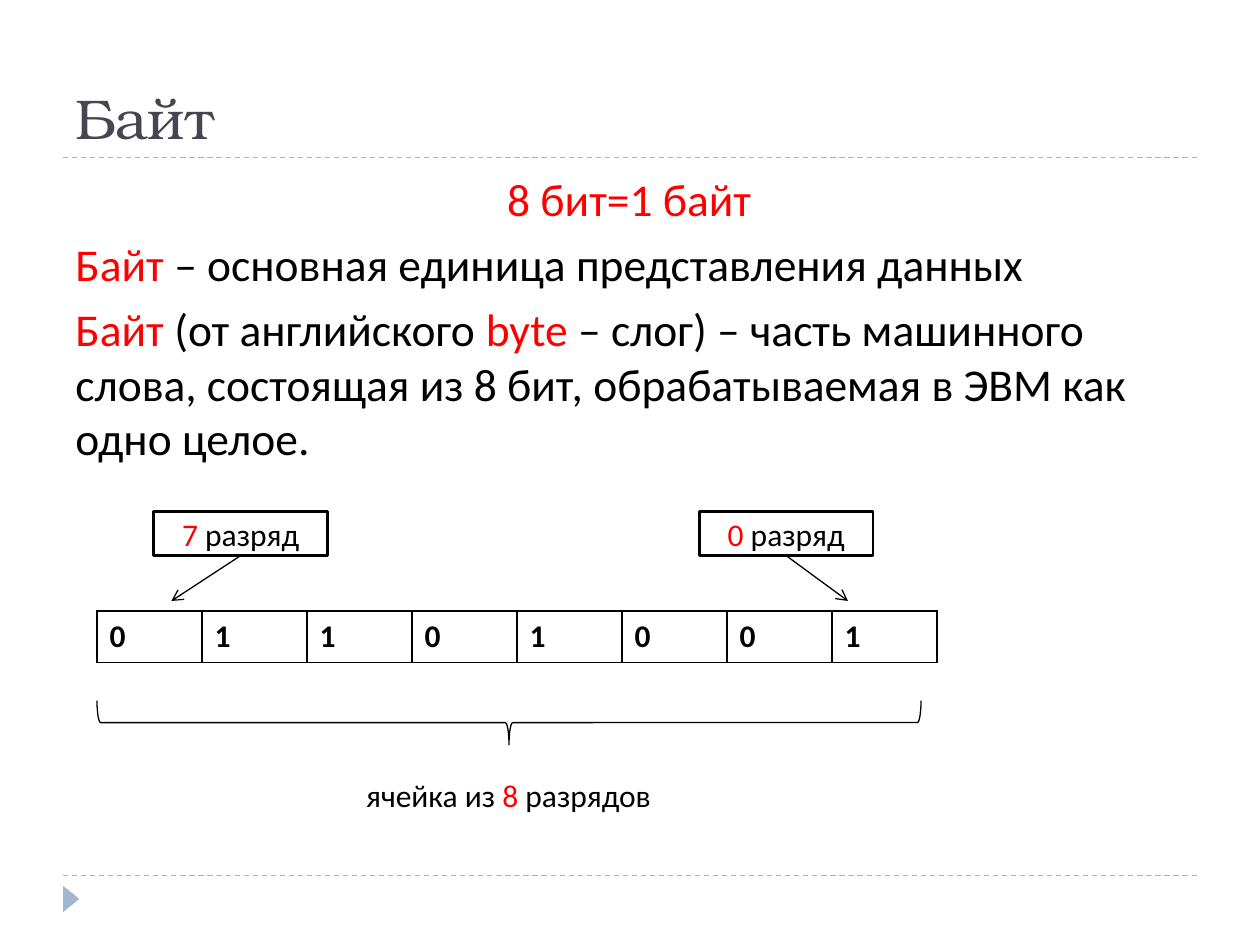
import pptx
import pptx.util
import pptx.dml.color
import pptx.enum.dml
import pptx.enum.shapes
import pptx.enum.text
import pptx.oxml
import pptx.oxml.ns
from lxml import etree

Inches = pptx.util.Inches
Pt = pptx.util.Pt
SHAPE = pptx.enum.shapes.MSO_SHAPE
ALIGN = pptx.enum.text.PP_ALIGN
ANCHOR = pptx.enum.text.MSO_ANCHOR
qn = pptx.oxml.ns.qn

COLORS = {
    "text": "000000",
    "accent": "FF0000",
    "title": "464653",
    "rule": "9FB8CD",
    "paper": "FFFFFF",
}
BITS = "01101001"


def color(name):
    return pptx.dml.color.RGBColor.from_string(COLORS[name])


def fill_solid(target, name):
    target.fill.solid()
    target.fill.fore_color.rgb = color(name)


def write_runs(paragraph, runs, size, align=ALIGN.LEFT):
    """Write (text, colour name) pairs into one paragraph."""
    paragraph.alignment = align
    paragraph.font.size = Pt(size)
    paragraph.font.name = "Calibri"
    for text, name in runs:
        run = paragraph.add_run()
        run.text = text
        run.font.color.rgb = color(name)


def add_text_box(slide, box, paragraphs, size, space_before=0):
    frame = slide.shapes.add_textbox(*map(Inches, box)).text_frame
    frame.word_wrap = True
    for index, (runs, align) in enumerate(paragraphs):
        paragraph = frame.add_paragraph() if index else frame.paragraphs[0]
        paragraph.space_before = Pt(space_before)
        write_runs(paragraph, runs, size, align)


def add_line(slide, start, end, name):
    line = slide.shapes.add_connector(
        pptx.enum.shapes.MSO_CONNECTOR.STRAIGHT, *map(Inches, start + end))
    line.line.color.rgb = color(name)
    line.line.width = Pt(0.75)
    etree.SubElement(line._element.spPr, qn("a:effectLst"))
    return line


def add_frame(slide, left, width):
    """Dashed rules and the corner marker."""
    for y in (6.95, 1.25):
        rule = add_line(slide, (left, y), (left + width, y), "rule")
        rule.line.dash_style = pptx.enum.dml.MSO_LINE.DASH
    marker = slide.shapes.add_shape(
        SHAPE.ISOSCELES_TRIANGLE, *map(Inches, (0.46, 7.07, 0.21, 0.13)))
    marker.rotation = 90
    marker.shadow.inherit = False
    fill_solid(marker, "rule")
    marker.line.fill.background()


def add_title(slide, box, text):
    title = slide.shapes.title
    title.left, title.top, title.width, title.height = map(Inches, box)
    title.text_frame.text = text
    title.text_frame.vertical_anchor = ANCHOR.BOTTOM
    paragraph = title.text_frame.paragraphs[0]
    paragraph.alignment = ALIGN.LEFT
    paragraph.font.name = "TeX Gyre Bonum"
    paragraph.font.size = Pt(32)
    paragraph.font.color.rgb = color("title")


def add_definition(slide, box):
    paragraphs = [
        ([("8 бит=1 байт", "accent")], ALIGN.CENTER),
        ([("Байт", "accent"),
          (" – основная единица представления данных", "text")], ALIGN.LEFT),
        ([("Байт", "accent"), (" (от английского ", "text"), ("byte ", "accent"),
          ("– слог) – часть машинного слова, состоящая из 8 бит, "
           "обрабатываемая в ЭВМ как одно целое.", "text")], ALIGN.LEFT),
    ]
    add_text_box(slide, box, paragraphs, 26, space_before=6)


def set_borders(cell):
    properties = cell._tc.get_or_add_tcPr()
    for index, side in enumerate(("lnL", "lnR", "lnT", "lnB")):
        border = etree.Element(qn(f"a:{side}"), w=str(Pt(1)))
        solid = etree.SubElement(border, qn("a:solidFill"))
        etree.SubElement(solid, qn("a:srgbClr"), val=COLORS["text"])
        properties.insert(index, border)


def add_bit_table(slide, box):
    table = slide.shapes.add_table(1, len(BITS), *map(Inches, box)).table
    for column, bit in enumerate(BITS):
        table.columns[column].width = Inches(box[2] / len(BITS))
        cell = table.cell(0, column)
        fill_solid(cell, "paper")
        set_borders(cell)
        paragraph = cell.text_frame.paragraphs[0]
        write_runs(paragraph, [(bit, "text")], 18)
        paragraph.font.bold = True


def add_bit_label(slide, box, digit, target):
    """Boxed bit number with an arrow to its cell."""
    label = slide.shapes.add_shape(SHAPE.RECTANGLE, *map(Inches, box))
    label.shadow.inherit = False
    fill_solid(label, "paper")
    label.line.color.rgb = color("text")
    label.line.width = Pt(1.5)
    label.text_frame.word_wrap = True
    label.text_frame.vertical_anchor = ANCHOR.MIDDLE
    write_runs(label.text_frame.paragraphs[0],
               [(digit, "accent"), (" разряд", "text")], 18, ALIGN.CENTER)

    left, top, width, height = box
    arrow = add_line(slide, (left + width / 2, top + height), target, "text")
    arrow.begin_connect(label, 2)
    etree.SubElement(arrow.line._get_or_add_ln(), qn("a:tailEnd"), type="arrow")


def add_brace(slide, box):
    """Brace spanning the box, its point facing down."""
    left, top, width, height = box
    brace = slide.shapes.add_shape(
        SHAPE.LEFT_BRACE,
        Inches(left + (width - height) / 2), Inches(top + (height - width) / 2),
        Inches(height), Inches(width))
    brace.rotation = 270
    brace.shadow.inherit = False
    brace.fill.background()
    brace.line.color.rgb = color("text")
    brace.line.width = Pt(0.75)


def add_byte_diagram(slide, left, top):
    add_bit_table(slide, (left, top + 0.79, 6.67, 0.41))
    for offset, digit, target in ((0.45, "7", 0.59), (4.78, "0", 5.96)):
        add_bit_label(slide, (left + offset, top, 1.38, 0.35), digit,
                      (left + target, top + 0.71))
    add_brace(slide, (left, top + 1.5, 6.54, 0.35))
    caption = [("ячейка из ", "text"), ("8", "accent"), (" разрядов", "text")]
    add_text_box(slide, (left + 1.57, top + 2.05, 3.39, 0.4),
                 [(caption, ALIGN.CENTER)], 18)


def main():
    presentation = pptx.Presentation()
    presentation.slide_width = Inches(10)
    presentation.slide_height = Inches(7.5)
    slide = presentation.slides.add_slide(presentation.slide_layouts[5])
    add_frame(slide, 0.5, 9)
    add_title(slide, (0.5, 0.17, 9, 1.08), "Байт")
    add_definition(slide, (0.5, 1.31, 8.99, 2.5))
    add_byte_diagram(slide, 0.77, 4.06)
    presentation.save("out.pptx")


if __name__ == "__main__":
    main()
